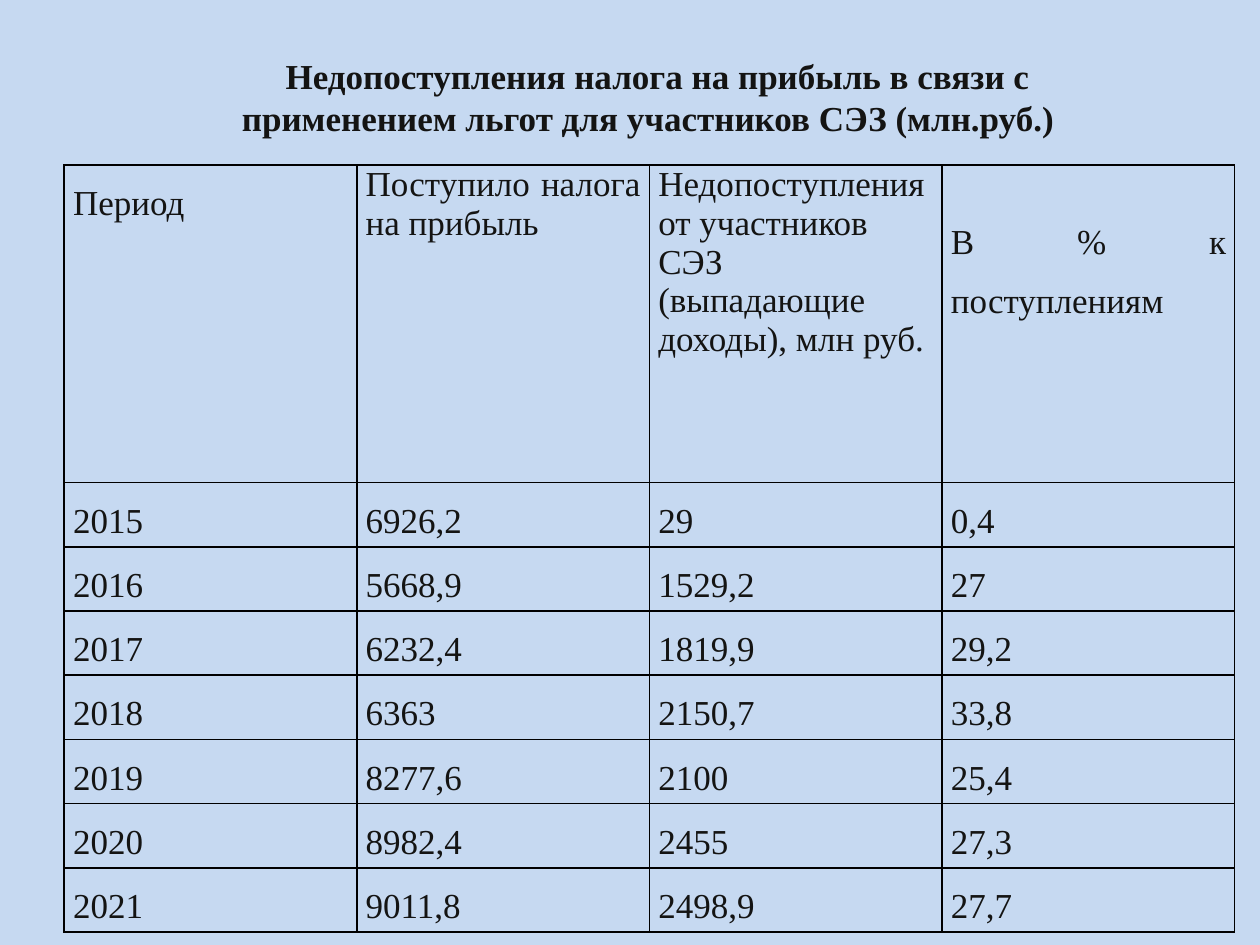
from dataclasses import dataclass

from lxml.etree import SubElement
from pptx import Presentation
from pptx.dml.color import RGBColor
from pptx.enum.text import MSO_ANCHOR, PP_ALIGN
from pptx.oxml.ns import qn
from pptx.util import Inches, Pt

BACKGROUND = RGBColor(0xC6, 0xD9, 0xF1)
TEXT_COLOR = RGBColor(0x14, 0x14, 0x13)
BORDER_COLOR = RGBColor(0x00, 0x00, 0x00)
FONT_NAME = "Times New Roman"
FONT_SIZE = Pt(20)


@dataclass
class CellText:
    text: str
    alignment: PP_ALIGN = PP_ALIGN.JUSTIFY
    line_spacing: float = 1.5
    top_margin: float = 0


TITLE_LINES = [
    "Недопоступления налога на прибыль в связи с",
    "применением льгот для участников СЭЗ (млн.руб.)",
]
HEADER = [
    CellText("Период"),
    CellText("Поступило налога на прибыль", line_spacing=1.0),
    CellText("Недопоступления от участников СЭЗ (выпадающие доходы), млн руб.",
             PP_ALIGN.LEFT, 1.0),
    CellText("В % к поступлениям", top_margin=0.31),
]
YEARLY_VALUES = [
    ("2015", "6926,2", "29", "0,4"),
    ("2016", "5668,9", "1529,2", "27"),
    ("2017", "6232,4", "1819,9", "29,2"),
    ("2018", "6363", "2150,7", "33,8"),
    ("2019", "8277,6", "2100", "25,4"),
    ("2020", "8982,4", "2455", "27,3"),
    ("2021", "9011,8", "2498,9", "27,7"),
]
TABLE_WIDTH, HEADER_HEIGHT, ROW_HEIGHT = 9.29, 2.52, 0.51


def format_runs(paragraph, bold: bool = False) -> None:
    for run in paragraph.runs:
        run.font.name = FONT_NAME
        run.font.size = FONT_SIZE
        run.font.bold = bold
        run.font.color.rgb = TEXT_COLOR


def add_borders(cell) -> None:
    properties = cell._tc.get_or_add_tcPr()
    for side in ("lnL", "lnR", "lnT", "lnB"):
        line = SubElement(properties, qn(f"a:{side}"), w=str(Pt(1)))
        fill = SubElement(line, qn("a:solidFill"))
        SubElement(fill, qn("a:srgbClr"), val=str(BORDER_COLOR))


def fill_cell(cell, content: CellText) -> None:
    cell.margin_left = cell.margin_right = Inches(0.07)
    cell.margin_top = Inches(content.top_margin)
    cell.margin_bottom = 0
    add_borders(cell)
    cell.fill.background()
    cell.text_frame.text = content.text
    paragraph = cell.text_frame.paragraphs[0]
    paragraph.alignment = content.alignment
    paragraph.line_spacing = content.line_spacing
    format_runs(paragraph)


def add_data_table(slide) -> None:
    rows = [HEADER] + [[CellText(value) for value in values] for values in YEARLY_VALUES]
    height = HEADER_HEIGHT + ROW_HEIGHT * len(YEARLY_VALUES)
    table = slide.shapes.add_table(
        len(rows), len(HEADER), Inches(0.51), Inches(1.31),
        Inches(TABLE_WIDTH), Inches(height)).table
    table.first_row = table.horz_banding = False
    for column in table.columns:
        column.width = Inches(TABLE_WIDTH / len(HEADER))
    for index, contents in enumerate(rows):
        table.rows[index].height = Inches(ROW_HEIGHT if index else HEADER_HEIGHT)
        for column_index, content in enumerate(contents):
            fill_cell(table.cell(index, column_index), content)


def add_title(slide) -> None:
    title = slide.shapes.add_textbox(Inches(1.76), Inches(0.38), Inches(6.77), Inches(0.77))
    text_frame = title.text_frame
    text_frame.word_wrap = True
    text_frame.vertical_anchor = MSO_ANCHOR.MIDDLE
    text_frame.margin_left = text_frame.margin_right = 0
    text_frame.text = "\n".join(TITLE_LINES)
    for paragraph in text_frame.paragraphs:
        paragraph.alignment = PP_ALIGN.CENTER
        format_runs(paragraph, bold=True)
    # The first line sits slightly to the right of the second
    text_frame.paragraphs[0]._p.get_or_add_pPr().set("marL", str(Inches(0.15)))


def main() -> None:
    presentation = Presentation()
    presentation.slide_width = Inches(10)
    presentation.slide_height = Inches(7.5)
    slide = presentation.slides.add_slide(presentation.slide_layouts[6])

    # Background
    slide.background.fill.solid()
    slide.background.fill.fore_color.rgb = BACKGROUND

    # Table and title
    add_data_table(slide)
    add_title(slide)
    presentation.save("out.pptx")


if __name__ == "__main__":
    main()
